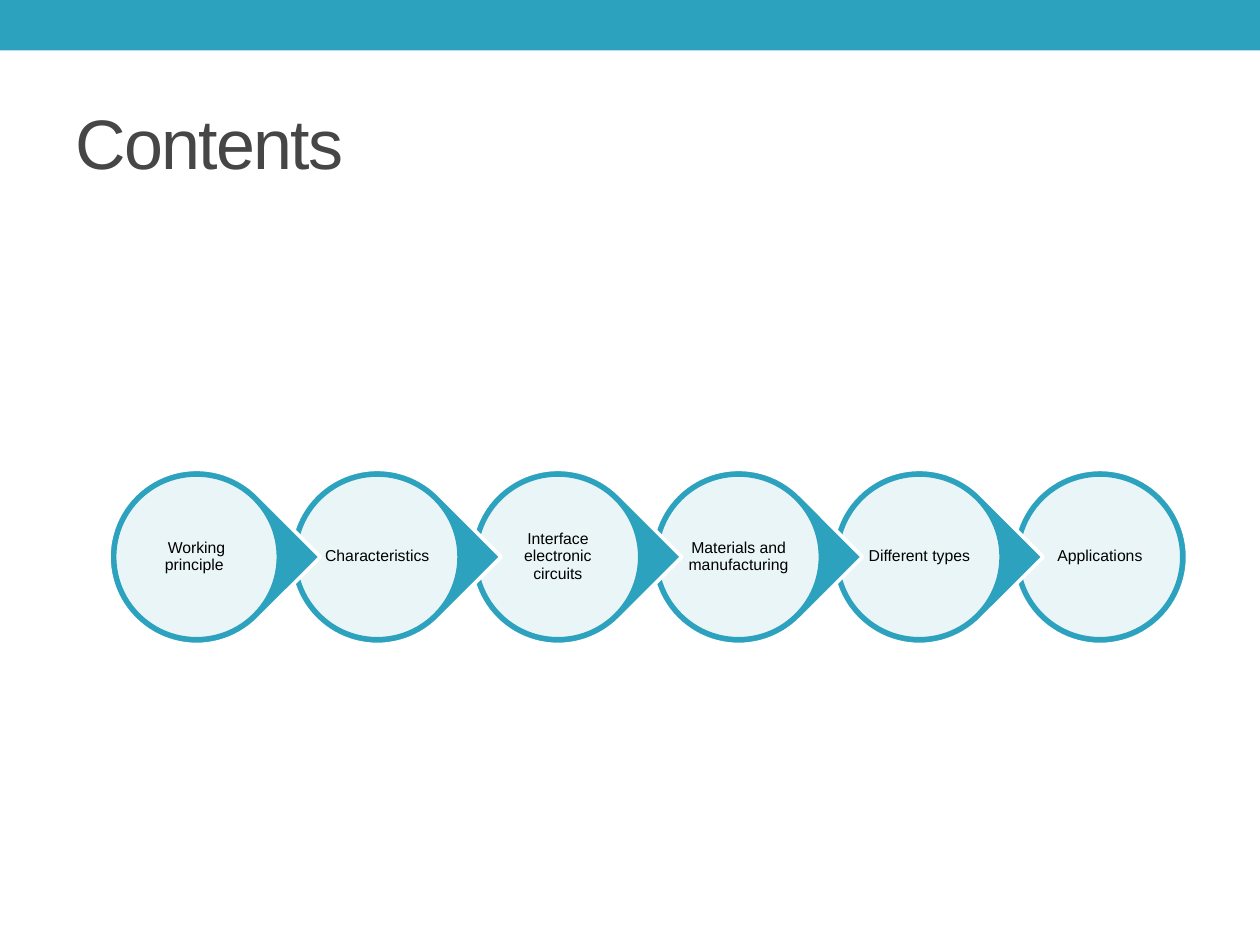
from lxml import etree
from pptx import Presentation
from pptx.dml.color import RGBColor
from pptx.enum.shapes import MSO_SHAPE as Shape
from pptx.enum.text import MSO_ANCHOR as Anchor, PP_ALIGN as Align
from pptx.oxml.ns import qn
from pptx.util import Inches, Pt

TEAL = RGBColor(0x2D, 0xA2, 0xBF)
WHITE = RGBColor(0xFF, 0xFF, 0xFF)
BLACK = RGBColor(0x00, 0x00, 0x00)
GRAY = RGBColor(0x46, 0x46, 0x46)

TOPICS = [
    "Working principle ",
    "Characteristics",
    "Interface electronic circuits",
    "Materials and manufacturing",
    "Different types",
    "Applications",
]
FIRST_CENTER, LAST_CENTER, CENTER_Y = 1.56, 8.73, 4.42
PITCH = (LAST_CENTER - FIRST_CENTER) / (len(TOPICS) - 1)
OUTER, INNER, LABEL = 1.39, 1.3, 0.93


def add_filled(kind, left, top, width, height, fill, line=None):
    shape = slide.shapes.add_shape(
        kind, Inches(left), Inches(top), Inches(width), Inches(height))
    shape.shadow.inherit = False
    shape.fill.solid()
    shape.fill.fore_color.rgb = fill
    if line is None:
        shape.line.fill.background()
    else:
        shape.line.color.rgb = line
        shape.line.width = Pt(2.08)
    return shape


def add_label(left, top, width, height, text, frame_format, font_format, color):
    box = slide.shapes.add_textbox(
        Inches(left), Inches(top), Inches(width), Inches(height))
    frame = box.text_frame
    for name, value in frame_format.items():
        setattr(frame, name, value)
    paragraph = frame.paragraphs[0]
    run = paragraph.add_run()
    run.text = text
    for name, value in font_format.items():
        setattr(run.font, name, value)
    run.font.color.rgb = color
    return paragraph


presentation = Presentation()
presentation.slide_width = Inches(10)
presentation.slide_height = Inches(7.5)
slide = presentation.slides.add_slide(presentation.slide_layouts[6])

add_filled(Shape.RECTANGLE, 0, 0, 10, 0.4, TEAL)

title_frame = {"word_wrap": True, "vertical_anchor": Anchor.MIDDLE}
title_font = {"name": "Arial", "size": Pt(40)}
title = add_label(0.5, 0.58, 9, 1.08, "Contents", title_frame, title_font, GRAY)
title.runs[0].font._element.set("spc", "-100")

margins = ("margin_left", "margin_top", "margin_right", "margin_bottom")
topic_frame = title_frame | dict.fromkeys(margins, Inches(0.01))
topic_font = {"name": "Arial", "size": Pt(9)}

# Right to left, so that each arrow tip overlaps the next circle
last = len(TOPICS) - 1
for index in range(last, -1, -1):
    center_x = FIRST_CENTER + index * PITCH
    outer_box, inner_box, label_box = (
        (center_x - size / 2, CENTER_Y - size / 2, size, size)
        for size in (OUTER, INNER, LABEL))

    kind = Shape.OVAL if index == last else Shape.TEAR
    pointer = add_filled(kind, *outer_box, TEAL, WHITE)
    if index < last:
        pointer.rotation = 45

    circle = add_filled(Shape.OVAL, *inner_box, WHITE, TEAL)
    fill_color = circle.fill._xPr.find(qn("a:solidFill"))[0]
    etree.SubElement(fill_color, qn("a:alpha"), val="90000")

    paragraph = add_label(
        *label_box, TOPICS[index], topic_frame, topic_font, BLACK)
    paragraph.alignment = Align.CENTER
    paragraph.line_spacing = 0.9

presentation.save("out.pptx")
